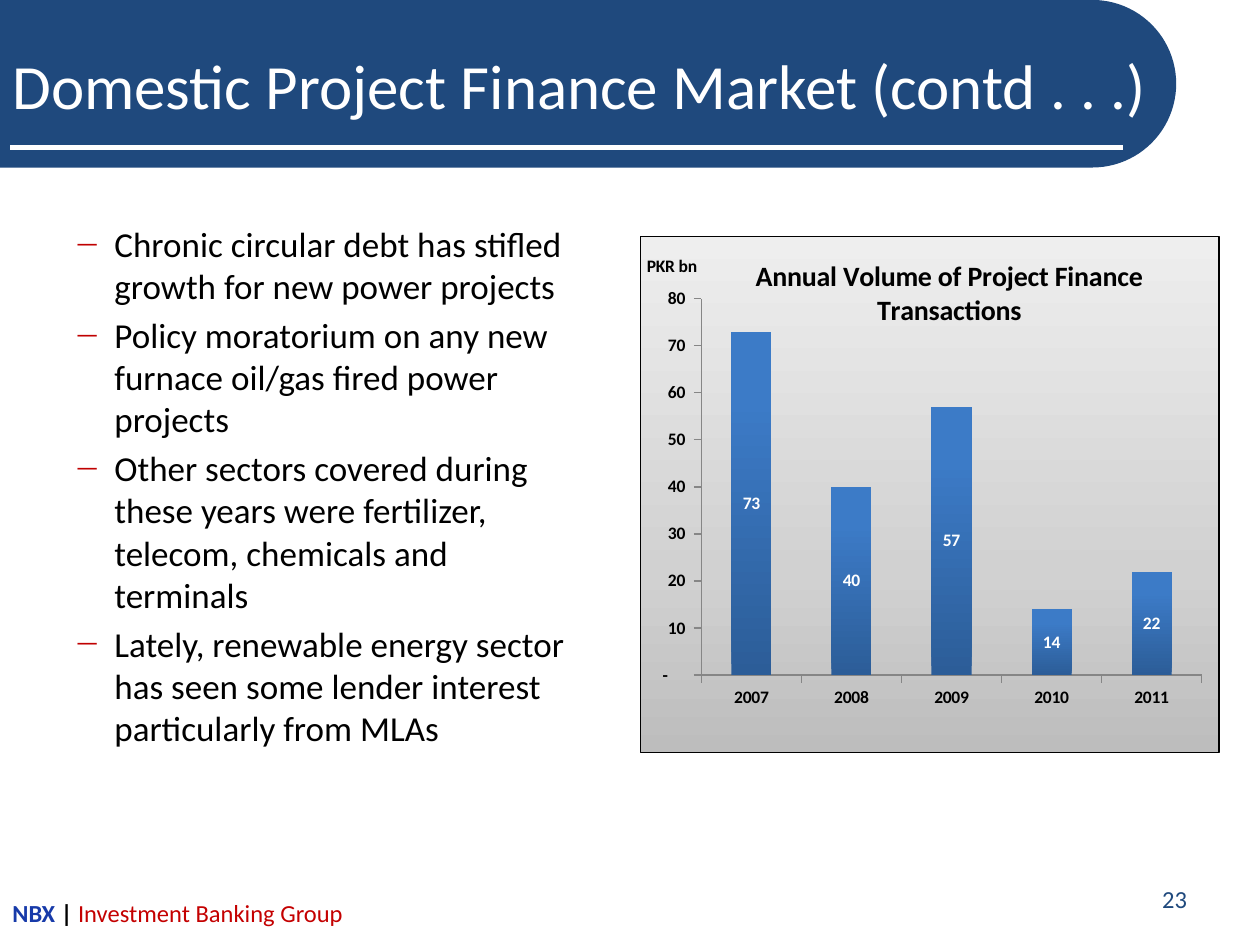
"""Build the slide on the domestic project finance market."""
from math import cos, pi, sin

from lxml.etree import SubElement
from pptx import Presentation
from pptx.chart.data import CategoryChartData as Data
from pptx.dml.color import RGBColor as Rgb
from pptx.enum.chart import XL_CHART_TYPE as Kind, XL_LABEL_POSITION as Spot, XL_TICK_MARK as Tick
from pptx.enum.shapes import MSO_CONNECTOR as Link
from pptx.enum.text import MSO_ANCHOR as Anchor, PP_ALIGN as Align
from pptx.oxml import parse_xml
from pptx.oxml.ns import nsdecls, qn
from pptx.util import Inches, Pt

THEME = {
    "font": "Calibri", "navy": "1F497D", "white": "FFFFFF", "black": "000000",
    "dash": "C00000", "blue": "173AA9", "red": "C40000", "axis": "868686",
    "bar": [(0, "2C5D98"), (0.8, "3C7BC7")],
    "panel": [(0, "BDBDBD"), (35, "D1D1D1"), (100, "EEEEEE")],
    "title": 36, "body": 20, "foot": 14, "head": 16, "tick": 10,
}

deck = Presentation()
deck.slide_width, deck.slide_height = Inches(10), Inches(7.5)
col, row = deck.slide_width / 100, deck.slide_height / 75
slide = deck.slides.add_slide(deck.slide_layouts[6])
shapes = slide.shapes


def write(area, paras, size, tint, anchor=Anchor.TOP):
    """Add a wrapped text box and return its text frame."""
    x, y, w, h = area
    frame = shapes.add_textbox(int(x * col), int(y * row), int(w * col), int(h * row)).text_frame
    frame.word_wrap = True
    frame.vertical_anchor = anchor
    frame.text = "\n".join(paras)
    for para in frame.paragraphs:
        for run in para.runs:
            run.font.name, run.font.size = THEME["font"], Pt(size)
            run.font.color.rgb = Rgb.from_string(THEME[tint])
    return frame


def place(node, index, **parts):
    """Give a chart part a manual layout in shares of the chart."""
    for old in node.findall(qn("c:layout")):
        node.remove(old)
    layout = parse_xml(f"<c:layout {nsdecls('c')}><c:manualLayout/></c:layout>")
    for name, value in parts.items():
        SubElement(layout[0], qn(f"c:{name}")).set("val", str(value))
    node.insert(index, layout)


mid, rad, steps = 86.7, 6.65, 48
arc = [(mid + rad * sin(pi * i / steps), rad - rad * cos(pi * i / steps)) for i in range(steps + 1)]
path = shapes.build_freeform(0, 0)
path.add_line_segments([(int(x * col), int(y * row)) for x, y in arc + [(0, 2 * rad)]], close=True)
band = path.convert_to_shape()
band.shadow.inherit = False
band.fill.solid()
band.fill.fore_color.rgb = Rgb.from_string(THEME["navy"])
band.line.fill.background()

rule = shapes.add_connector(Link.STRAIGHT, int(0.8 * col), int(11.7 * row), int(89.1 * col), int(11.7 * row))
rule.line.color.rgb = Rgb.from_string(THEME["white"])
rule.line.width = Pt(3)
SubElement(rule._element.spPr, qn("a:effectLst"))

write((0, 1.7, 92.5, 10), ["Domestic Project Finance Market (contd . . .)"],
      THEME["title"], "white", Anchor.MIDDLE)

points = [
    "Chronic circular debt has stifled growth for new power projects",
    "Policy moratorium on any new furnace oil/gas fired power projects",
    "Other sectors covered during these years were fertilizer, telecom, chemicals and terminals",
    "Lately, renewable energy sector has seen some lender interest particularly from MLAs",
]
body = write((0, 17.2, 47.7, 50), points, THEME["body"], "black")
for para in body.paragraphs:
    para.space_before = Pt(THEME["body"] * 0.2)
    props = para._p.get_or_add_pPr()
    props.set("marL", str(Inches(0.81)))
    props.set("indent", str(Inches(-0.31)))
    tint = SubElement(props, qn("a:buClr"))
    SubElement(tint, qn("a:srgbClr")).set("val", THEME["dash"])
    SubElement(props, qn("a:buSzPct")).set("val", "75000")
    SubElement(props, qn("a:buFont")).set("typeface", THEME["font"])
    SubElement(props, qn("a:buChar")).set("char", "—")

page = write((71.9, 68.8, 23.3, 5), ["23"], THEME["foot"], "navy", Anchor.MIDDLE)
page.paragraphs[0].alignment = Align.RIGHT

data = Data()
data.categories = ["2007", "2008", "2009", "2010", "2011"]
data.add_series("Series 1", [73, 40, 57, 14, 22])
chart = shapes.add_chart(Kind.COLUMN_STACKED, int(50.8 * col), int(18.7 * row),
                         int(46 * col), int(41.1 * row), data).chart
chart.has_legend = False
chart.font.name, chart.font.size = THEME["font"], Pt(THEME["tick"])
chart.font.color.rgb = Rgb.from_string(THEME["black"])

cats, vals = chart.category_axis, chart.value_axis
vals.minimum_scale, vals.maximum_scale, vals.major_unit = 0, 80, 10
vals.has_major_gridlines = False
vals.tick_labels.number_format = '_(* #,##0_);_(* \\(#,##0\\);_(* "-"??_);_(@_)'
vals.tick_labels.number_format_is_linked = False
for axis in (cats, vals):
    axis.major_tick_mark = Tick.OUTSIDE
    axis.format.line.color.rgb = Rgb.from_string(THEME["axis"])
    axis.tick_labels.font.bold = True
    axis.tick_labels.font.size = Pt(THEME["tick"])

heads = [
    (chart.chart_title, "Annual Volume of Project Finance Transactions", THEME["head"], 0.19, 0.03),
    (vals.axis_title, "PKR bn", THEME["tick"], 0.005, 0.03),
]
for head, text, size, x, y in heads:
    head.text_frame.text = text
    font = head.text_frame.paragraphs[0].runs[0].font
    font.name, font.size, font.bold = THEME["font"], Pt(size), True
    font.color.rgb = Rgb.from_string(THEME["black"])
    node = head._element
    node.find(".//" + qn("a:bodyPr")).set("rot", "0")
    place(node, 1, xMode="edge", yMode="edge", x=x, y=y)
chart.chart_title.include_in_layout = True
chart.chart_title._element.find(qn("c:overlay")).set("val", "1")

plot = chart.plots[0]
plot.gap_width, plot.overlap, plot.vary_by_categories = 150, 100, False
fill = plot.series[0].format.fill
fill.gradient()
fill.gradient_angle = 90
for stop, (pos, tint) in zip(fill.gradient_stops, THEME["bar"]):
    stop.position = pos
    stop.color.rgb = Rgb.from_string(tint)
plot.has_data_labels = True
labels = plot.data_labels
labels.show_value, labels.position = True, Spot.CENTER
labels.number_format, labels.number_format_is_linked = "#,##0", False
labels.font.bold, labels.font.size = True, Pt(THEME["tick"])
labels.font.color.rgb = Rgb.from_string(THEME["white"])

root = chart._chartSpace.find(qn("c:chart"))
place(root.find(qn("c:plotArea")), 0, layoutTarget="inner", xMode="edge", yMode="edge",
      x=0.105, y=0.121, w=0.865, h=0.729)
stops = "".join(f'<a:gs pos="{pos * 1000}"><a:srgbClr val="{tint}"/></a:gs>' for pos, tint in THEME["panel"])
root.addnext(parse_xml(
    f'<c:spPr {nsdecls("c", "a")}><a:gradFill><a:gsLst>{stops}</a:gsLst><a:lin ang="16200000" scaled="0"/>'
    f'</a:gradFill><a:ln w="{Pt(0.75)}"><a:solidFill><a:srgbClr val="{THEME["black"]}"/></a:solidFill></a:ln></c:spPr>'))

foot = write((0, 70.8, 35.9, 4.2), [""], THEME["foot"], "black").paragraphs[0]
for text, tint, bold in [("NBX ", "blue", True), ("| ", "black", True),
                         ("Investment Banking Group", "red", False)]:
    run = foot.add_run()
    run.text = text
    run.font.name, run.font.size, run.font.bold = THEME["font"], Pt(THEME["foot"]), bold
    run.font.color.rgb = Rgb.from_string(THEME[tint])

deck.save("out.pptx")
